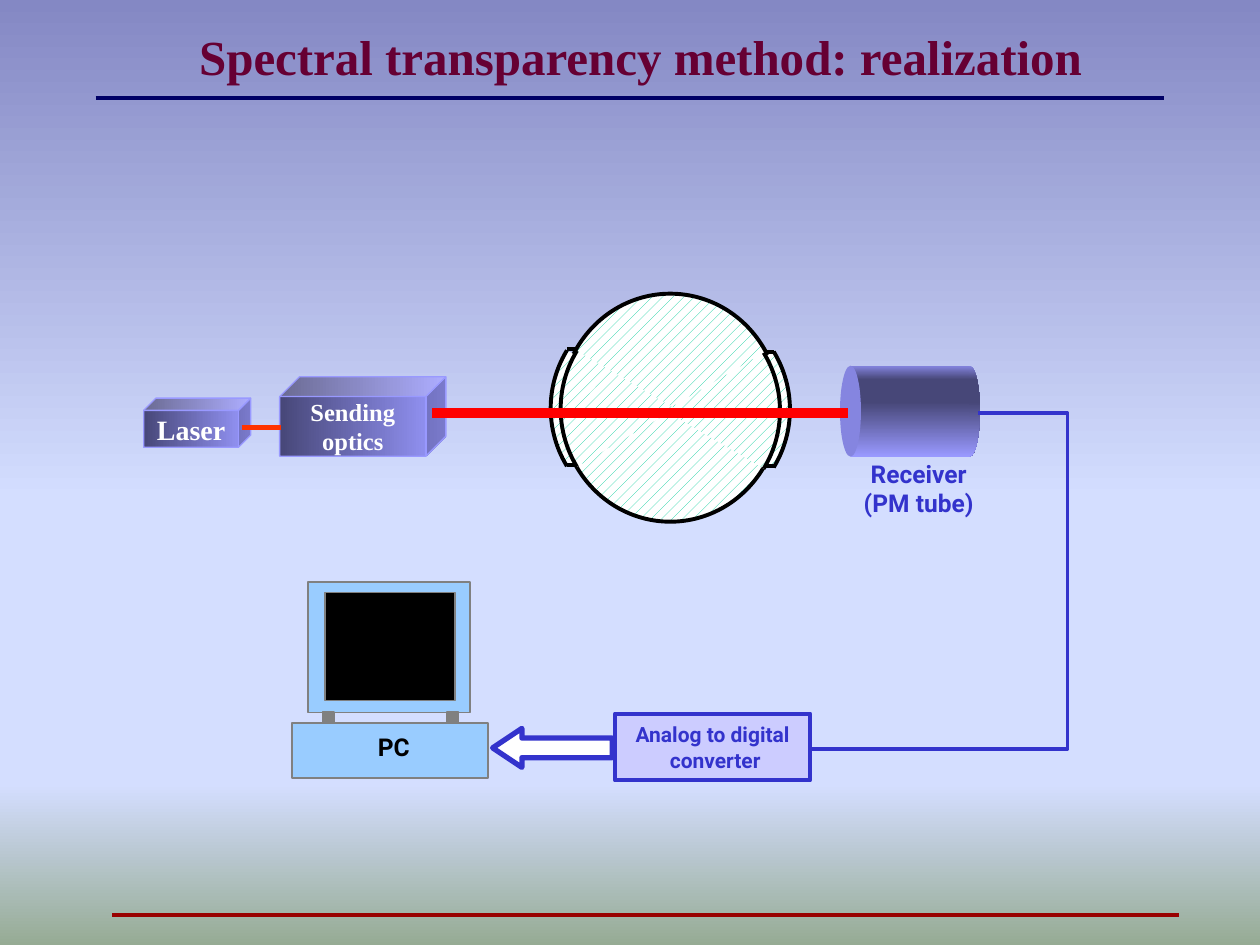
import pptx
import pptx.dml.color
import pptx.enum.dml
import pptx.enum.shapes
import pptx.enum.text
import pptx.oxml
import pptx.oxml.ns
import pptx.util
import lxml.etree

Pt = pptx.util.Pt
RGBColor = pptx.dml.color.RGBColor
Shape = pptx.enum.shapes.MSO_SHAPE
qn = pptx.oxml.ns.qn

NAVY = RGBColor(0x00, 0x00, 0x66)
MAROON = RGBColor(0x99, 0x00, 0x00)
WINE = RGBColor(0x66, 0x00, 0x33)
BLUE = RGBColor(0x33, 0x33, 0xCC)
LILAC = RGBColor(0xCC, 0xCC, 0xFF)
VIOLET = RGBColor(0x99, 0x99, 0xFF)
DARK_VIOLET = RGBColor(0x47, 0x47, 0x78)
FACE_VIOLET = RGBColor(0x85, 0x85, 0xE0)
SKY = RGBColor(0x99, 0xCC, 0xFF)
GRAY = RGBColor(0x80, 0x80, 0x80)
TEAL = RGBColor(0x00, 0xCC, 0x99)
BLACK = RGBColor(0x00, 0x00, 0x00)
WHITE = RGBColor(0xFF, 0xFF, 0xFF)
RED = RGBColor(0xFF, 0x00, 0x00)
ORANGE = RGBColor(0xFF, 0x33, 0x00)
DUSK = RGBColor(0x84, 0x88, 0xC4)
PALE = RGBColor(0xD4, 0xDE, 0xFF)
MOSS = RGBColor(0x96, 0xAB, 0x94)

SERIF = "Times New Roman"
SANS = "Roboto"
BACKDROP = [(0, DUSK), (53, PALE), (83, PALE), (100, MOSS)]
METAL = [(0, DARK_VIOLET), (100, VIOLET)]
TUBE = [(0, FACE_VIOLET), (15, DARK_VIOLET), (40, DARK_VIOLET), (100, VIOLET)]


def set_gradient(owner, fill, stops, angle):
    """Fill with a linear gradient of (percent, colour) stops."""
    fill.gradient()
    fill.gradient_angle = angle
    stop_list = next(owner.iter(qn("a:gsLst")))
    for old in list(stop_list):
        stop_list.remove(old)
    for percent, color in stops:
        stop = lxml.etree.SubElement(stop_list, qn("a:gs"), pos=str(percent * 1000))
        lxml.etree.SubElement(stop, qn("a:srgbClr"), val=str(color))


def set_line(shape, color, width):
    """Outline a shape, or leave it without an outline."""
    if color is None:
        shape.line.fill.background()
    else:
        shape.line.color.rgb = color
        shape.line.width = Pt(width)


def write_text(shape, text, font=SANS, size=14, color=BLACK):
    """Write bold, centred lines of text into a shape."""
    frame = shape.text_frame
    frame.word_wrap = False
    frame.vertical_anchor = pptx.enum.text.MSO_ANCHOR.MIDDLE
    for index, words in enumerate(text.split("\n")):
        para = frame.paragraphs[0] if index == 0 else frame.add_paragraph()
        para.alignment = pptx.enum.text.PP_ALIGN.CENTER
        span = para.add_run()
        span.text = words
        span.font.name = font
        span.font.size = Pt(size)
        span.font.bold = True
        span.font.color.rgb = color


def add_box(shapes, kind, bounds, fill=None, line=None, width=1, stops=None, angle=0):
    """Add a preset shape with a solid or gradient fill."""
    box = shapes.add_shape(kind, *map(Pt, bounds))
    box.shadow.inherit = False
    if stops:
        set_gradient(box._element, box.fill, stops, angle)
    else:
        box.fill.solid()
        box.fill.fore_color.rgb = fill
    set_line(box, line, width)
    return box


def add_hatched(shapes, kind, bounds):
    """Add a black-outlined shape with a dotted fill."""
    box = add_box(shapes, kind, bounds, WHITE, BLACK, 2.25)
    box.fill.patterned()
    box.fill.pattern = pptx.enum.dml.MSO_PATTERN.PERCENT_20
    box.fill.fore_color.rgb = TEAL
    box.fill.back_color.rgb = WHITE
    return box


def add_line(shapes, start, end, color, width):
    """Add a straight line without a shadow."""
    line = shapes.add_connector(
        pptx.enum.shapes.MSO_CONNECTOR.STRAIGHT, *map(Pt, start + end))
    set_line(line, color, width)
    lxml.etree.SubElement(line._element.spPr, qn("a:effectLst"))


def add_label(shapes, bounds, text, **style):
    """Add a text box."""
    write_text(shapes.add_textbox(*map(Pt, bounds)), text, **style)


def add_cable(shapes, points):
    """Add an open, bent line through the points."""
    builder = shapes.build_freeform(*points[0], scale=Pt(1))
    builder.add_line_segments(points[1:], close=False)
    cable = builder.convert_to_shape()
    cable.shadow.inherit = False
    cable.fill.background()
    set_line(cable, BLUE, 2.25)


def add_title(page):
    """Place and write the title."""
    title = page.shapes.title
    title.left, title.top, title.width, title.height = map(Pt, (60, 15, 612, 34))
    write_text(title, "Spectral transparency method: realization",
               font=SERIF, size=28, color=WINE)
    title.text_frame.word_wrap = True


def add_chamber(page):
    """Draw the round chamber with a window on each side."""
    shapes = page.shapes.add_group_shape().shapes
    add_hatched(shapes, Shape.OVAL, (320.4, 167.8, 125.3, 130.3))
    radius_x, radius_y, spread = 65.5, 64.5, 30.5
    windows = [
        (0, [(385.9, 234), (380.2, 234.7)], 437.4, 442.4, (200.9, 266.4)),
        (180, [(380.2, 233.3), (385.9, 233.6)], 324, 329, (199.4, 265.7)),
    ]
    for facing, centres, left, right, edges in windows:
        for x, y in centres:
            arc = add_hatched(shapes, Shape.ARC,
                              (x - radius_x, y - radius_y, 2 * radius_x, 2 * radius_y))
            for index, turn in enumerate((-spread, spread)):
                arc.adjustments[index] = (facing + turn) % 360 * 0.6
        for y in edges:
            add_line(shapes, (left, y), (right, y), BLACK, 2.25)


def add_computer(page):
    """Draw the computer with its screen."""
    shapes = page.shapes.add_group_shape().shapes
    parts = [
        ((167, 413.3, 111.8, 31.2), SKY),
        ((175.9, 332.6, 92.8, 74.6), SKY),
        ((185.8, 338.6, 74.2, 61.8), BLACK),
        ((184.3, 407, 6.5, 6.5), GRAY),
        ((255.6, 407, 6.5, 6.5), GRAY),
    ]
    for bounds, fill in parts:
        add_box(shapes, Shape.RECTANGLE, bounds, fill, GRAY)
    add_label(shapes, (208, 414.7, 34, 24), "PC")


def add_receiver(page):
    """Draw the receiver as a lying cylinder."""
    shapes = page.shapes.add_group_shape().shapes
    left, top, length, height, cap = 480, 209, 80, 52, 12
    add_box(shapes, Shape.OVAL, (left + length - cap, top, cap, height),
            stops=TUBE, angle=270)
    add_box(shapes, Shape.RECTANGLE, (left + cap / 2, top, length - cap, height),
            stops=TUBE, angle=270)
    add_box(shapes, Shape.OVAL, (left, top, cap, height), FACE_VIOLET)


def main():
    """Build and save the slide."""
    deck = pptx.Presentation()
    deck.slide_width, deck.slide_height = Pt(720), Pt(540)
    page = deck.slides.add_slide(deck.slide_layouts[5])
    set_gradient(page.element, page.background.fill, BACKDROP, 270)
    shapes = page.shapes
    add_title(page)
    add_line(shapes, (54.7, 56.2), (665.3, 56.2), NAVY, 2.25)
    add_line(shapes, (64.2, 522.7), (674, 522.7), MAROON, 2.25)

    add_receiver(page)
    add_chamber(page)
    converter = add_box(shapes, Shape.RECTANGLE, (351.4, 407.8, 111.6, 38.2),
                        LILAC, BLUE, 2.25)
    write_text(converter, "Analog to digital\n converter", size=12, color=BLUE)
    for bounds, text, size in [((159.8, 215.3, 95, 45.4), "Sending\noptics", 14),
                               ((82.1, 227.5, 61.2, 28.1), "Laser", 16)]:
        cube = add_box(shapes, Shape.CUBE, bounds, line=VIOLET, width=0.75, stops=METAL)
        write_text(cube, text, font=SERIF, size=size, color=WHITE)
    add_line(shapes, (138.2, 244.1), (160.6, 244.1), ORANGE, 3)
    add_computer(page)
    add_label(shapes, (486, 258.5, 78, 41), "Receiver\n(PM tube)", color=BLUE)
    arrow = add_box(shapes, Shape.LEFT_ARROW, (281.5, 416.2, 68.4, 22.3), WHITE, BLUE, 3)
    arrow.adjustments[1] = 0.75
    add_line(shapes, (247, 236), (484.6, 236), RED, 6)
    add_cable(shapes, [(558.7, 236), (609.8, 236), (609.8, 428.4), (462.2, 428.4)])
    deck.save("out.pptx")


if __name__ == "__main__":
    main()
